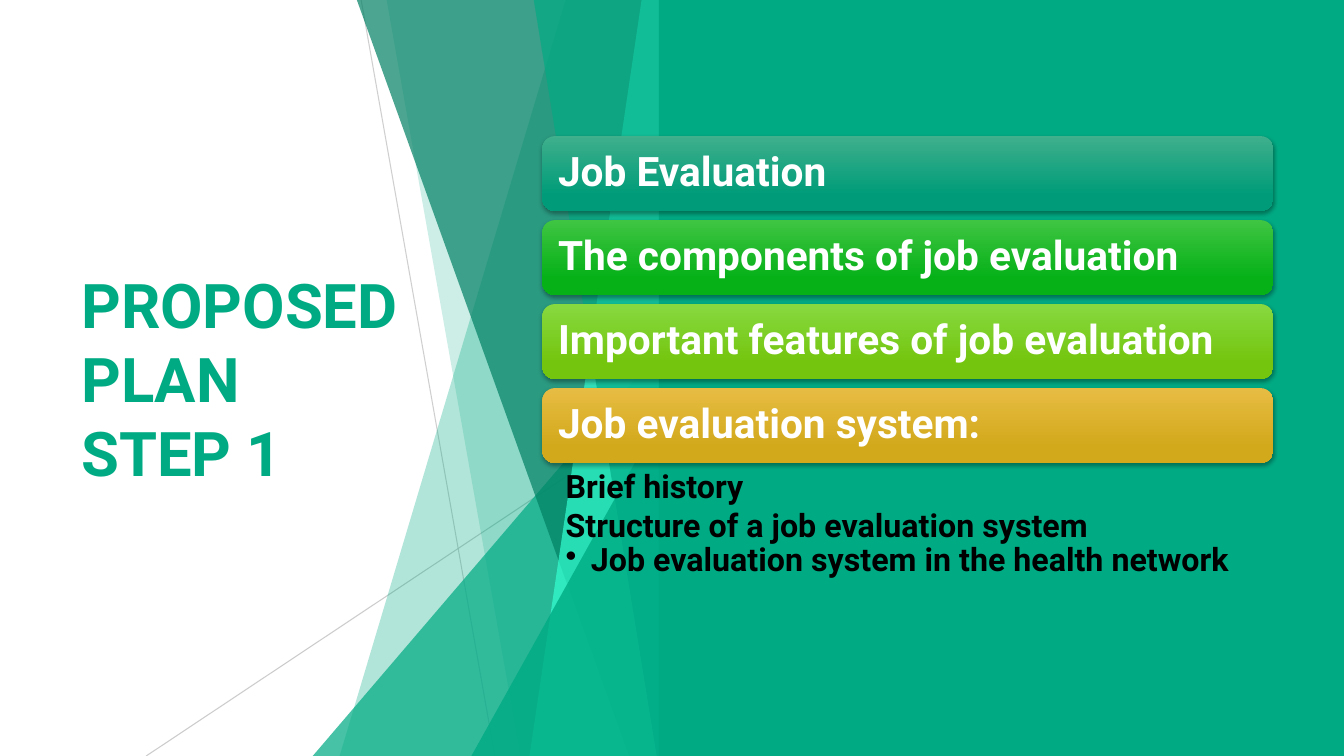
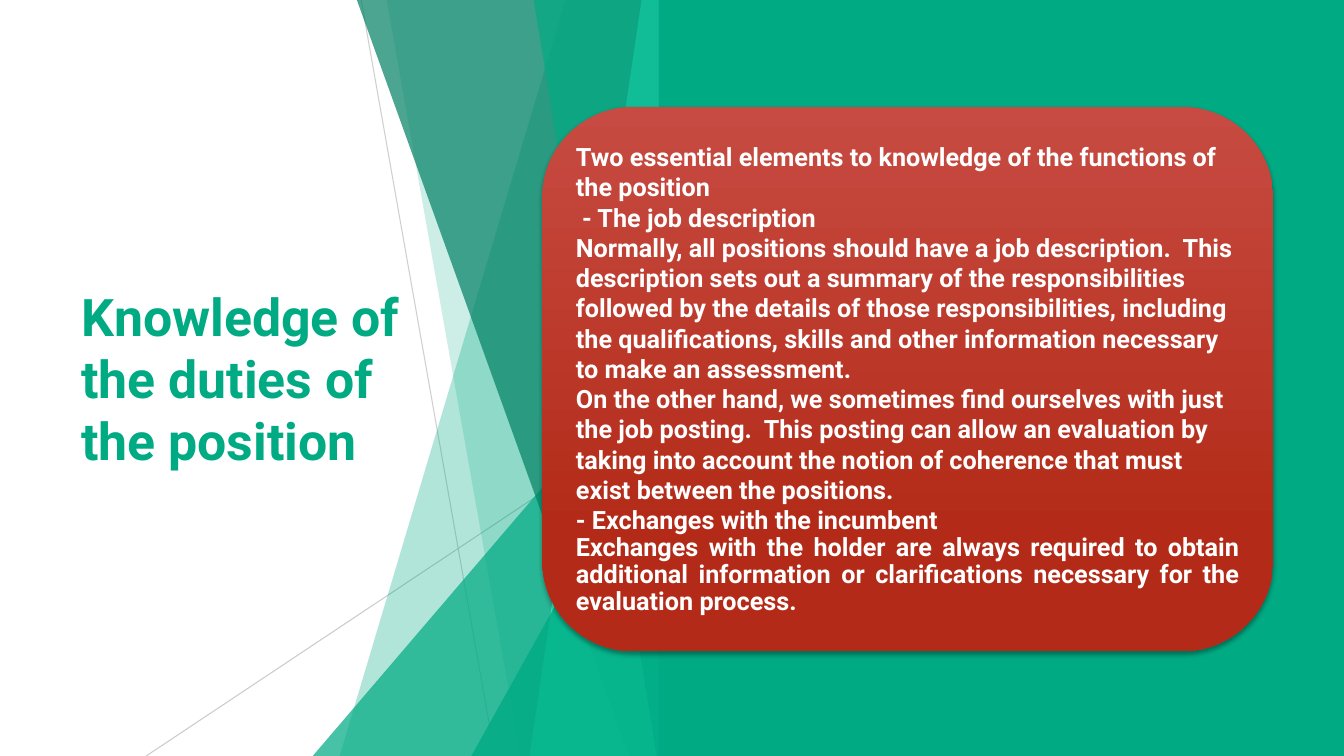
"""Build two job evaluation slides with a faceted green backdrop."""

from dataclasses import dataclass

from lxml import etree
from pptx import Presentation
from pptx.dml.color import RGBColor
from pptx.enum.shapes import MSO_CONNECTOR, MSO_SHAPE
from pptx.enum.text import MSO_ANCHOR, PP_ALIGN
from pptx.oxml.ns import qn
from pptx.util import Pt

LINE = MSO_CONNECTOR.STRAIGHT
RECT, ROUND, TRI = MSO_SHAPE.RECTANGLE, MSO_SHAPE.ROUNDED_RECTANGLE, MSO_SHAPE.ISOSCELES_TRIANGLE
TOP, MIDDLE = MSO_ANCHOR.TOP, MSO_ANCHOR.MIDDLE
LEFT, JUST = PP_ALIGN.LEFT, PP_ALIGN.JUSTIFY


@dataclass(frozen=True)
class Theme:
    font: str = "Roboto"
    green: str = "00AB84"
    dark: str = "008063"
    mint: str = "34FFD1"
    rule: str = "BFBFBF"
    white: str = "FFFFFF"
    black: str = "000000"
    teal: tuple = ("3FAF8C", "009C79")
    leaf: tuple = ("3FC542", "06B118")
    lime: tuple = ("87D940", "74C50E")
    gold: tuple = ("E7BC43", "D2A91B")
    red: tuple = ("C74B42", "B32B18")
    head: int = 44
    long: int = 37
    bar: int = 29
    item: int = 23
    body: int = 18


T = Theme()
WIDE, HIGH = 960, 540
EDGE = 480
CARD_X, CARD_W = 387.4, 522
BAR_Y, BAR_H, STEP = 97.2, 53.5, 60

RULES = [
    (258, 0, 353.5, HIGH, 75),
    (EDGE, 290.2, 104.4, HIGH, 80),
]
FACETS = [
    ("strip", 404, 242.6, T.green, 30),
    ("strip", 276.2, 371.8, T.green, 20),
    ("wedge", 240, 223.4, T.green, 72),
    ("strip", 254.9, 449.3, T.dark, 70),
    ("strip", 458.3, 378.2, T.mint, 70),
    ("strip", 381.3, 469.1, T.green, 65),
    ("wedge", 283, 336.7, T.green, 80),
]
BARS = [
    ("Job Evaluation", T.teal),
    ("The components of job evaluation", T.leaf),
    ("Important features of job evaluation", T.lime),
    ("Job evaluation system:", T.gold),
]
ITEMS = [
    "Brief history",
    "Structure of a job evaluation system",
    "Job evaluation system in the health network",
]
DUTIES = [
    "Two essential elements to knowledge of the functions of the position",
    " - The job description",
    "Normally, all positions should have a job description.  This description sets out "
    "a summary of the responsibilities followed by the details of those responsibilities, "
    "including the qualifications, skills and other information necessary to make an "
    "assessment.",
    "On the other hand, we sometimes find ourselves with just the job posting.  This "
    "posting can allow an evaluation by taking into account the notion of coherence that "
    "must exist between the positions.",
    "- Exchanges with the incumbent",
    "Exchanges with the holder are always required to obtain additional information or "
    "clarifications necessary for the evaluation process.",
]
SLIDES = [
    (
        ["PROPOSED PLAN", "STEP 1"], T.head,
        [(BAR_Y + n * STEP, BAR_H, tones, [text], T.bar, 8.6)
         for n, (text, tones) in enumerate(BARS)],
        ITEMS,
    ),
    (
        ["Knowledge of the duties of the position"], T.long,
        [(76.3, 388.8, T.red, DUTIES, T.body, 5)],
        [],
    ),
]


def paint(shape, hue, alpha=100):
    """Give a shape a flat fill, with no outline and no shadow."""
    shape.shadow.inherit = False
    shape.line.fill.background()
    shape.fill.solid()
    shape.fill.fore_color.rgb = RGBColor.from_string(hue)
    if alpha < 100:
        tint = shape.element.spPr.find(".//" + qn("a:srgbClr"))
        etree.SubElement(tint, qn("a:alpha"), val=str(alpha * 1000))


def write(shape, lines, size, hue, pads, anchor=MIDDLE, tail=0.9):
    """Fill a shape with bold lines and return the last paragraph."""
    frame = shape.text_frame
    frame.word_wrap = True
    frame.vertical_anchor = anchor
    frame.margin_left = frame.margin_right = Pt(pads[0])
    frame.margin_top = frame.margin_bottom = Pt(pads[1])
    for n, text in enumerate(lines):
        para = frame.add_paragraph() if n else frame.paragraphs[0]
        para.alignment = LEFT
        run = para.add_run()
        run.text = text
        run.font.name = T.font
        run.font.size = Pt(size)
        run.font.bold = True
        run.font.color.rgb = RGBColor.from_string(hue)
    para.line_spacing = tail
    return para


deck = Presentation()
deck.slide_width, deck.slide_height = Pt(WIDE), Pt(HIGH)

for title, size, cards, items in SLIDES:
    shapes = deck.slides.add_slide(deck.slide_layouts[6]).shapes

    box = shapes.add_textbox(Pt(51), Pt(108.7), Pt(279.5), Pt(322.6))
    write(box, title, size, T.green, (7.2, 3.6), tail=1.0)

    for x1, y1, x2, y2, alpha in RULES:
        rule = shapes.add_connector(LINE, Pt(x1), Pt(y1), Pt(x2), Pt(y2))
        rule.line.width = Pt(0.75)
        rule.line.color.rgb = RGBColor.from_string(T.rule)
        props = rule.element.spPr
        tint = props.find(".//" + qn("a:srgbClr"))
        etree.SubElement(tint, qn("a:alpha"), val=str(alpha * 1000))
        etree.SubElement(props, qn("a:effectLst"))

    for kind, top, foot, hue, alpha in FACETS:
        if kind == "strip":
            pen = shapes.build_freeform(Pt(top), Pt(0))
            pen.add_line_segments(
                [(Pt(EDGE), Pt(0)), (Pt(EDGE), Pt(HIGH)), (Pt(foot), Pt(HIGH))])
            facet = pen.convert_to_shape()
        else:
            facet = shapes.add_shape(TRI, Pt(foot), Pt(top), Pt(EDGE - foot), Pt(HIGH - top))
            facet.adjustments[0] = 1
        paint(facet, hue, alpha)

    panel = shapes.add_shape(RECT, Pt(470.6), Pt(0), Pt(WIDE - 470.6), Pt(HIGH))
    paint(panel, T.green)

    for top, high, tones, lines, size, pad in cards:
        card = shapes.add_shape(ROUND, Pt(CARD_X), Pt(top), Pt(CARD_W), Pt(high))
        paint(card, tones[0])
        card.fill.gradient()
        card.fill.gradient_angle = 270
        for stop, hue, spot in zip(card.fill.gradient_stops, tones, (0, 0.78)):
            stop.color.rgb = RGBColor.from_string(hue)
            stop.position = spot
        glow = etree.SubElement(
            card.element.spPr.find(qn("a:effectLst")), qn("a:outerShdw"),
            blurRad=str(Pt(3)), dist=str(Pt(2)), dir="5400000", rotWithShape="0")
        tint = etree.SubElement(glow, qn("a:srgbClr"), val=T.black)
        etree.SubElement(tint, qn("a:alpha"), val="35000")
        last = write(card, lines, size, T.white, (pad, pad))
        if len(lines) > 1:
            last.alignment = JUST

    if items:
        box = shapes.add_textbox(Pt(CARD_X), Pt(330.5), Pt(CARD_W), Pt(113.8))
        last = write(box, items, T.item, T.black, (16.6, 2.9), TOP)
        props = last._p.get_or_add_pPr()
        props.set("marL", str(Pt(18)))
        props.set("indent", str(Pt(-18)))
        etree.SubElement(props, qn("a:buChar"), char="•")

deck.save("out.pptx")
